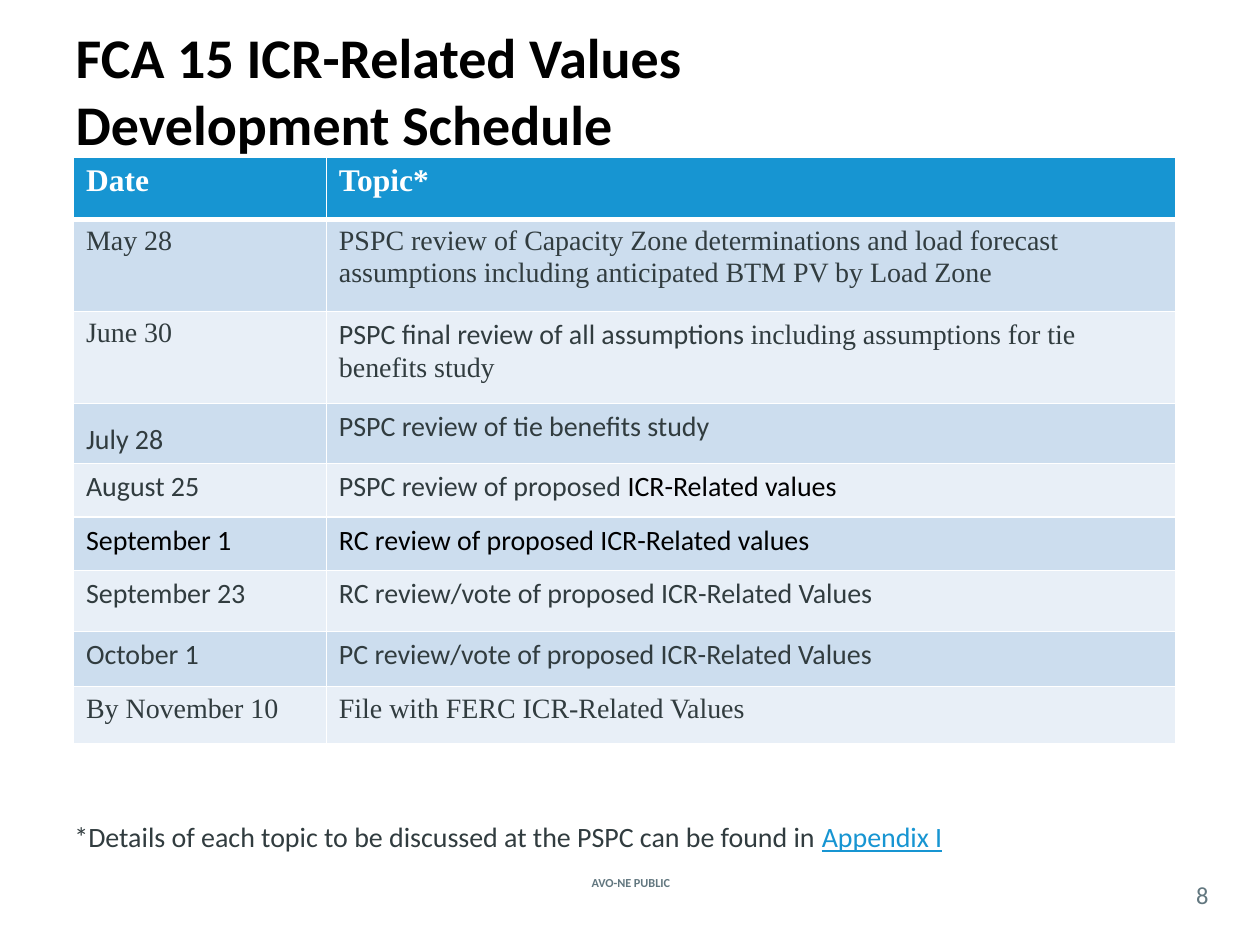
import pptx
import pptx.dml.color
import pptx.enum.text
import pptx.oxml
import pptx.oxml.ns
import pptx.util

Pt = pptx.util.Pt
ANCHOR = pptx.enum.text.MSO_ANCHOR
ALIGN = pptx.enum.text.PP_ALIGN
SANS, SERIF = "Calibri", "Times New Roman"
COLORS = {
    "black": "000000", "white": "FFFFFF", "body": "313C3F", "muted": "62777F",
    "accent": "1795D2", "dark band": "CCDDEE", "light band": "E8EFF7",
}


def rgb(name):
    return pptx.dml.color.RGBColor.from_string(COLORS[name])


class SlideBuilder:
    def __init__(self, slide):
        self.slide = slide

    def style(self, run, size=16, font=SANS, color="body", bold=False, underline=False):
        run.font.size = Pt(size)
        run.font.name = font
        run.font.color.rgb = rgb(color)
        run.font.bold = bold
        if underline:
            run.font.underline = True

    def add_runs(self, paragraph, parts):
        """Fill a paragraph with (text, style) parts."""
        for text, options in parts:
            run = paragraph.add_run()
            run.text = text
            self.style(run, **options)

    def title(self, text, left, top, width, height):
        shape = self.slide.shapes.title
        shape.left, shape.top, shape.width, shape.height = map(Pt, (left, top, width, height))
        frame = shape.text_frame
        frame.text = text
        frame.auto_size = pptx.enum.text.MSO_AUTO_SIZE.NONE
        frame.vertical_anchor = ANCHOR.MIDDLE
        paragraph = frame.paragraphs[0]
        paragraph.alignment = ALIGN.LEFT
        for run in paragraph.runs:
            self.style(run, size=32, color="black", bold=True)

    def text(self, parts, left, top, width, height, align=ALIGN.LEFT,
             anchor=ANCHOR.TOP, inset=None):
        frame = self.slide.shapes.add_textbox(*map(Pt, (left, top, width, height))).text_frame
        frame.word_wrap = True
        frame.vertical_anchor = anchor
        if inset is not None:
            frame.margin_left = frame.margin_right = Pt(inset)
            frame.margin_top = frame.margin_bottom = Pt(inset)
        frame.paragraphs[0].alignment = align
        self.add_runs(frame.paragraphs[0], parts)

    def borders(self, cell, top, bottom):
        properties = cell._tc.get_or_add_tcPr()
        for side, width in (("L", 1), ("R", 1), ("T", top), ("B", bottom)):
            properties.append(pptx.oxml.parse_xml(
                f'<a:ln{side} {pptx.oxml.ns.nsdecls("a")} w="{Pt(width)}"><a:solidFill>'
                f'<a:srgbClr val="{COLORS["white"]}"/></a:solidFill></a:ln{side}>'))

    def table(self, rows, left, top, widths, heights):
        table = self.slide.shapes.add_table(
            len(rows), len(widths), Pt(left), Pt(top),
            Pt(sum(widths)), Pt(sum(heights))).table
        for column, width in zip(table.columns, widths):
            column.width = Pt(width)
        for index, (row, height) in enumerate(zip(rows, heights)):
            table.rows[index].height = Pt(height)
            band = "accent" if index == 0 else "dark band" if index % 2 else "light band"
            for cell, parts in zip(table.rows[index].cells, row):
                self.borders(cell, 3 if index == 1 else 1, 3 if index == 0 else 1)
                cell.fill.solid()
                cell.fill.fore_color.rgb = rgb(band)
                self.add_runs(cell.text_frame.paragraphs[0], parts)
        return table


def main():
    presentation = pptx.Presentation()
    presentation.slide_width, presentation.slide_height = Pt(720), Pt(540)
    builder = SlideBuilder(presentation.slides.add_slide(presentation.slide_layouts[5]))

    # Title
    builder.title("FCA 15 ICR-Related Values\vDevelopment Schedule", 36, 6, 648, 90)

    # Schedule table
    header = {"size": 18, "font": SERIF, "color": "white", "bold": True}
    serif, sans, black = {"font": SERIF}, {}, {"color": "black"}
    rows = [
        ([("Date", header)], [("Topic*", header)]),
        ([("May 28", serif)],
         [("PSPC review of Capacity Zone determinations and load forecast "
           "assumptions including anticipated BTM PV by Load Zone", serif)]),
        ([("June 30", serif)],
         [("PSPC final review of all assumptions ", sans),
          ("including assumptions for tie benefits study", serif)]),
        ([("July 28", sans)], [("PSPC review of tie benefits study", sans)]),
        ([("August 25", sans)],
         [("PSPC review of proposed ", sans), ("ICR-Related values", black)]),
        ([("September 1", black)], [("RC review of proposed ICR-Related values", black)]),
        ([("September 23", sans)], [("RC review/vote of proposed ICR-Related Values", sans)]),
        ([("October 1", sans)], [("PC review/vote of proposed ICR-Related Values", sans)]),
        ([("By November 10", serif)], [("File with FERC ICR-Related Values", serif)]),
    ]
    heights = [35.5, 52.5, 52.5, 34.5, 30.5, 30.5, 35, 31.5, 32.5]
    table = builder.table(rows, 42, 90, [144.5, 485.5], heights)
    table.cell(3, 0).vertical_anchor = ANCHOR.BOTTOM

    # Footnote
    builder.text([("*Details of each topic to be discussed at the PSPC can be found in ", sans),
                  ("Appendix I", {"color": "accent", "underline": True})],
                 35.5, 465, 653, 26.5)

    # Footer and slide number
    builder.text([("AVO-NE PUBLIC", {"size": 7, "color": "muted", "bold": True})],
                 307.5, 498, 106, 12.5, ALIGN.CENTER, ANCHOR.MIDDLE)
    builder.text([("8", {"size": 14, "color": "muted"})],
                 672, 501, 30, 21, ALIGN.CENTER, ANCHOR.MIDDLE, inset=0)

    presentation.save("out.pptx")


if __name__ == "__main__":
    main()
